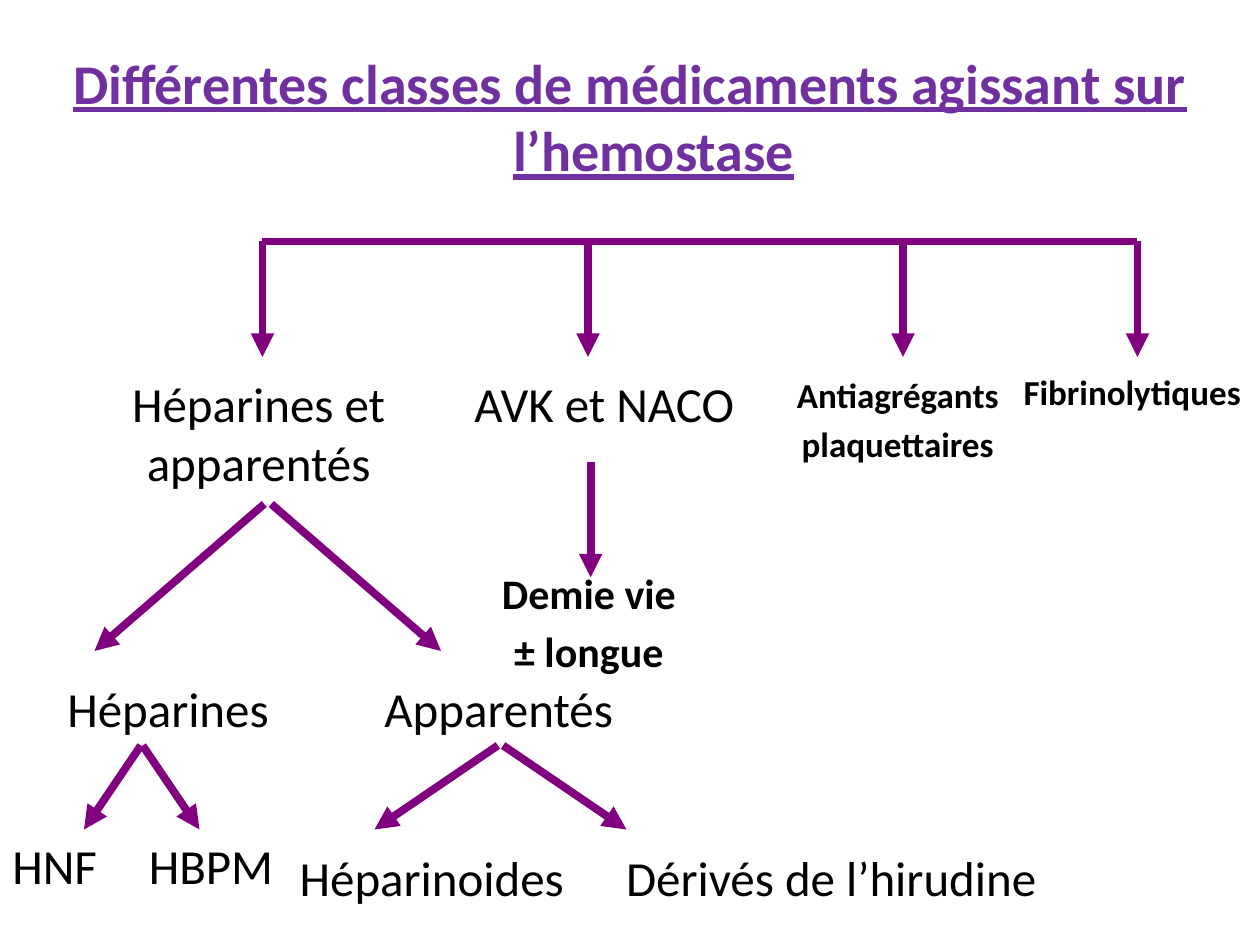
"""Build a slide charting the drug classes that act on hemostasis."""
from typing import NamedTuple

from lxml.etree import SubElement
from pptx import Presentation
from pptx.dml.color import RGBColor
from pptx.enum.shapes import MSO_CONNECTOR
from pptx.enum.text import PP_ALIGN
from pptx.oxml.ns import qn
from pptx.slide import Slide
from pptx.util import Pt

BLACK = RGBColor(0x00, 0x00, 0x00)
VIOLET = RGBColor(0x70, 0x30, 0xA0)
PURPLE = RGBColor(0x80, 0x00, 0x80)
BODY = {"name": "Calibri", "size": Pt(28)}
TITLE = {**BODY, "size": Pt(32), "bold": True, "underline": True}
STRONG = {**BODY, "size": Pt(24), "bold": True}
SMALL = {**BODY, "size": Pt(20), "bold": True}
HANGING = Pt(27)
BAR_TOP, BRANCH_BOTTOM = 138, 204
BRANCH_CENTERS = (150, 336, 516, 650)


class Label(NamedTuple):
    """A text box with its lines and format."""

    lines: tuple[str, ...]
    left: float
    top: float
    width: float
    height: float
    format_values: dict = BODY
    color: RGBColor = BLACK
    alignment: PP_ALIGN = PP_ALIGN.CENTER
    hanging: bool = True


class Fork(NamedTuple):
    """Two arrows that spread evenly from a common apex."""

    center: float
    top: float
    bottom: float
    reach: float
    gap: float


LABELS = (
    Label(("Différentes classes de médicaments agissant sur l’hemostase",),
          12, 24, 696, 102, TITLE, VIOLET),
    Label(("Héparines et apparentés",), 60, 210, 175.5, 54, hanging=False),
    Label(("AVK et NACO",), 264, 210, 168.5, 54, alignment=PP_ALIGN.LEFT),
    Label(("Antiagrégants", "plaquettaires"), 420, 210, 186, 78, SMALL),
    Label(("Fibrinolytiques",), 574, 208, 146, 78.5, SMALL),
    Label(("Demie vie", "± longue"), 258.5, 320.5, 156, 84, STRONG),
    Label(("Héparines",), 18, 384, 156, 54, hanging=False),
    Label(("Apparentés",), 210, 384, 150, 54, hanging=False),
    Label(("HNF",), 0, 474, 78, 48, alignment=PP_ALIGN.LEFT),
    Label(("HBPM",), 78, 474, 94.5, 48, alignment=PP_ALIGN.LEFT),
    Label(("Héparinoides",), 157.5, 481, 178.5, 48),
    Label(("Dérivés de l’hirudine",), 343.5, 481, 263, 48),
)
FORKS = (
    Fork(153, 288, 372, 99, 2),
    Fork(81, 426, 474, 33, 0.5),
    Fork(286, 426, 474, 72, 1.5),
)


def add_label(slide: Slide, label: Label) -> None:
    """Add one text box."""
    shape = slide.shapes.add_textbox(
        *map(Pt, (label.left, label.top, label.width, label.height)))
    frame = shape.text_frame
    frame.word_wrap = True
    frame.text = "\n".join(label.lines)
    for paragraph in frame.paragraphs:
        paragraph.alignment = label.alignment
        paragraph.space_before = Pt(label.format_values["size"].pt * 0.2)
        if label.hanging:
            properties = paragraph._p.get_or_add_pPr()
            properties.set("marL", str(HANGING))
            properties.set("indent", str(-HANGING))
        font = paragraph.runs[0].font
        for attribute, value in label.format_values.items():
            setattr(font, attribute, value)
        font.color.rgb = label.color


def add_line(slide: Slide, start: tuple[float, float],
             end: tuple[float, float], arrow: bool = True) -> None:
    """Add a thick line, with a triangle at its end if it is an arrow."""
    connector = slide.shapes.add_connector(
        MSO_CONNECTOR.STRAIGHT, *map(Pt, (*start, *end)))
    connector.line.width = Pt(4.5)
    connector.line.color.rgb = PURPLE
    if arrow:
        SubElement(connector.line._get_or_add_ln(), qn("a:tailEnd"), type="triangle")
    SubElement(connector._element.spPr, qn("a:effectLst"))


def add_fork(slide: Slide, fork: Fork) -> None:
    """Add the left and right arrows of a fork."""
    for side in (-1, 1):
        add_line(slide, (fork.center + side * fork.gap, fork.top),
                 (fork.center + side * fork.reach, fork.bottom))


def main() -> None:
    """Build and save the presentation."""
    presentation = Presentation()
    presentation.slide_width, presentation.slide_height = Pt(720), Pt(540)
    slide = presentation.slides.add_slide(presentation.slide_layouts[6])
    for label in LABELS:
        add_label(slide, label)
    for center in BRANCH_CENTERS:
        add_line(slide, (center, BAR_TOP), (center, BRANCH_BOTTOM))
    add_line(slide, (BRANCH_CENTERS[0], BAR_TOP), (BRANCH_CENTERS[-1], BAR_TOP), arrow=False)
    add_line(slide, (337.5, 264), (337.5, 330))
    for fork in FORKS:
        add_fork(slide, fork)
    presentation.save("out.pptx")


if __name__ == "__main__":
    main()
